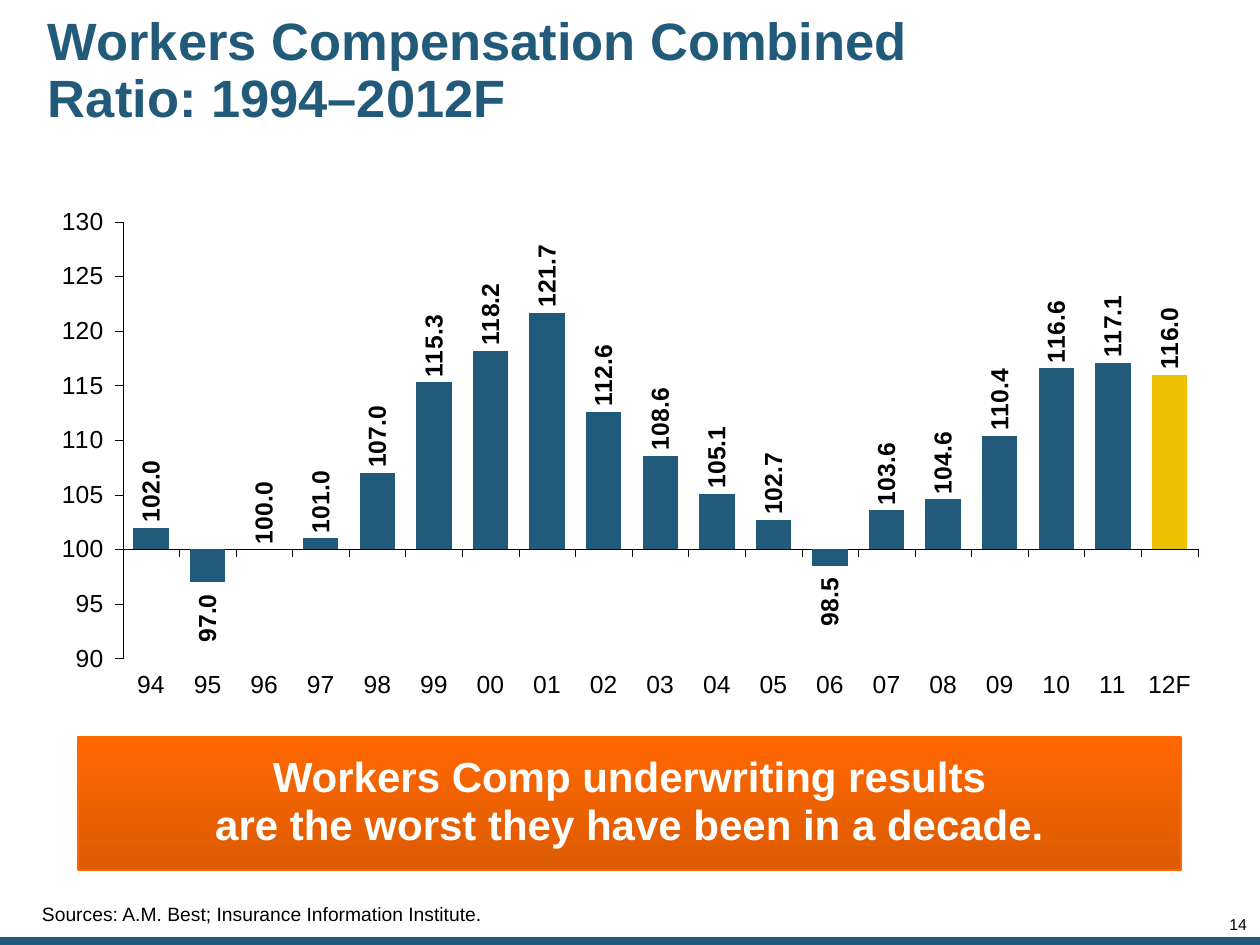
"""Build the workers compensation combined ratio slide."""
from dataclasses import dataclass

from lxml.etree import SubElement
from pptx import Presentation
from pptx.chart.data import CategoryChartData
from pptx.dml.color import RGBColor
from pptx.enum.chart import (XL_CHART_TYPE, XL_LABEL_POSITION, XL_TICK_LABEL_POSITION,
                             XL_TICK_MARK)
from pptx.enum.shapes import MSO_SHAPE
from pptx.enum.text import MSO_ANCHOR, PP_ALIGN
from pptx.oxml.ns import qn
from pptx.util import Emu, Pt

SCALE = 914400 / 126
YEARS = ["94", "95", "96", "97", "98", "99", "00", "01", "02", "03",
         "04", "05", "06", "07", "08", "09", "10", "11", "12F"]
RATIOS = [102, 97, 100, 101, 107, 115.3, 118.2, 121.7, 112.6, 108.6,
          105.1, 102.7, 98.5, 103.6, 104.6, 110.4, 116.6, 117.1, 116]


@dataclass(frozen=True)
class Theme:
    """Hold the colours, font and type sizes of the slide."""
    blue: str = "225A7A"
    gold: str = "EEC100"
    flame: str = "FF6801"
    rust: str = "DC5A01"
    black: str = "000000"
    white: str = "FFFFFF"
    face: str = "Arial"
    title: float = 30
    call: float = 24
    chart: float = 14.1
    note: float = 11
    page: float = 9


THEME = Theme()


def px(count):
    """Turn pixels into EMU."""
    return Emu(round(count * SCALE))


def rgb(code):
    """Turn a hex code into a colour."""
    return RGBColor.from_string(code)


def apply(item, values):
    """Set each named value on an object."""
    for name, value in values.items():
        setattr(item, name, value)


def style(font, size, color, bold=False):
    """Give a font the theme face with a size, colour and weight."""
    apply(font, {"name": THEME.face, "size": Pt(size), "bold": bold})
    font.color.rgb = rgb(color)


def write(shape, text, size, color, pads, bold=False, anchor=MSO_ANCHOR.TOP,
          align=PP_ALIGN.LEFT, lead=0.9):
    """Fill a shape with one styled paragraph, padded left, top, right and bottom."""
    frame = shape.text_frame
    sides = ("margin_left", "margin_top", "margin_right", "margin_bottom")
    apply(frame, dict(zip(sides, map(px, pads))))
    apply(frame, {"word_wrap": True, "vertical_anchor": anchor, "text": text})
    para = frame.paragraphs[0]
    apply(para, {"alignment": align, "line_spacing": lead})
    for run in para.runs:
        style(run.font, size, color, bold)


def label(slide, box, *args, **kinds):
    """Place a text box and write in it."""
    write(slide.shapes.add_textbox(*map(px, box)), *args, **kinds)


def block(slide, box):
    """Place a rectangle with no shadow."""
    shape = slide.shapes.add_shape(MSO_SHAPE.RECTANGLE, *map(px, box))
    shape.shadow.inherit = False
    return shape


def head(slide, box):
    """Place the slide title."""
    label(slide, box, "Workers Compensation Combined Ratio: 1994–2012F", THEME.title,
          THEME.blue, (6, 6, 6, 6), bold=True, anchor=MSO_ANCHOR.MIDDLE)


def layout(chart, spans):
    """Fix the inner plot area as fractions of the chart."""
    area = chart.plots[0]._element.getparent()
    for old in area.findall(qn("c:layout")):
        area.remove(old)
    outer = SubElement(area, qn("c:layout"))
    area.insert(0, outer)
    inner = SubElement(outer, qn("c:manualLayout"))
    marks = {"layoutTarget": "inner", "xMode": "edge", "yMode": "edge", **spans}
    for name, value in marks.items():
        SubElement(inner, qn(f"c:{name}")).set("val", str(value))


def axes(chart):
    """Style both axes and let them cross at 100."""
    for axis in (chart.category_axis, chart.value_axis):
        apply(axis, {"has_major_gridlines": False, "major_tick_mark": XL_TICK_MARK.OUTSIDE,
                     "minor_tick_mark": XL_TICK_MARK.NONE})
        axis.format.line.width = Pt(0.25)
        axis.format.line.color.rgb = rgb(THEME.black)
        style(axis.tick_labels.font, THEME.chart, THEME.black)
    chart.category_axis.tick_label_position = XL_TICK_LABEL_POSITION.LOW
    apply(chart.value_axis, {"minimum_scale": 90, "maximum_scale": 130,
                             "major_unit": 5, "crosses_at": 100})
    apply(chart.value_axis.tick_labels, {"number_format": r"#,##0_);[Red]\(#,##0\)",
                                         "number_format_is_linked": False})


def tags(plot):
    """Show upright bold values at the bar ends."""
    plot.has_data_labels = True
    labels = plot.data_labels
    apply(labels, {"show_value": True, "position": XL_LABEL_POSITION.OUTSIDE_END,
                   "number_format": r"#,##0.0_);[Red]\(#,##0.0\)",
                   "number_format_is_linked": False})
    style(labels.font, THEME.chart, THEME.black, True)
    body = labels._element.find(qn("c:txPr")).find(qn("a:bodyPr"))
    apply_xml = {"rot": "-5400000", "vert": "horz"}
    for name, value in apply_xml.items():
        body.set(name, value)


def graph(slide, box):
    """Place the column chart with the forecast in gold."""
    data = CategoryChartData()
    data.categories = YEARS
    data.add_series("Series 1", RATIOS)
    chart = slide.shapes.add_chart(XL_CHART_TYPE.COLUMN_CLUSTERED, *map(px, box), data).chart
    apply(chart, {"has_legend": False, "has_title": False})
    style(chart.font, THEME.chart, THEME.black)
    plot = chart.plots[0]
    apply(plot, {"gap_width": 60, "vary_by_categories": False})
    bars = plot.series[0]
    bars.invert_if_negative = False
    for part, color in ((bars, THEME.blue), (bars.points[len(YEARS) - 1], THEME.gold)):
        part.format.fill.solid()
        part.format.fill.fore_color.rgb = rgb(color)
    axes(chart)
    tags(plot)
    layout(chart, {"x": 0.066, "y": 0.048, "w": 0.935, "h": 0.84})


def banner(slide, box):
    """Place the shaded message box."""
    shape = block(slide, box)
    shape.fill.gradient()
    shape.fill.gradient_angle = 270
    for stop, color in zip(shape.fill.gradient_stops, (THEME.flame, THEME.rust)):
        stop.color.rgb = rgb(color)
    shape.line.width = Pt(1)
    shape.line.color.rgb = rgb(THEME.flame)
    write(shape, "Workers Comp underwriting results\vare the worst they have been in a decade.",
          THEME.call, THEME.white, (13, 6, 13, 9), bold=True, anchor=MSO_ANCHOR.MIDDLE,
          align=PP_ALIGN.CENTER, lead=0.95)


def foot(slide, box):
    """Place the bottom stripe, the sources and the page number."""
    left, top, width, height = box
    stripe = block(slide, (left, top + height - 8, width, 8))
    stripe.fill.solid()
    stripe.fill.fore_color.rgb = rgb(THEME.blue)
    stripe.line.fill.background()
    label(slide, (left - 8, top, width - 74, height),
          "Sources: A.M. Best; Insurance Information Institute.", THEME.note, THEME.black,
          (50, 0, 0, 19), anchor=MSO_ANCHOR.BOTTOM)
    label(slide, (left + width - 74, top + 33, 61, 16), "14", THEME.page, THEME.black,
          (0, 0, 0, 0), align=PP_ALIGN.RIGHT, lead=0.85)


def main():
    """Build and save the slide."""
    deck = Presentation()
    apply(deck, {"slide_width": px(1260), "slide_height": px(945)})
    slide = deck.slides.add_slide(deck.slide_layouts[6])
    head(slide, (42, 13, 1019, 118))
    graph(slide, (48, 197, 1150, 520))
    banner(slide, (78, 737, 1103, 133))
    foot(slide, (0, 885, 1260, 60))
    deck.save("out.pptx")


if __name__ == "__main__":
    main()
